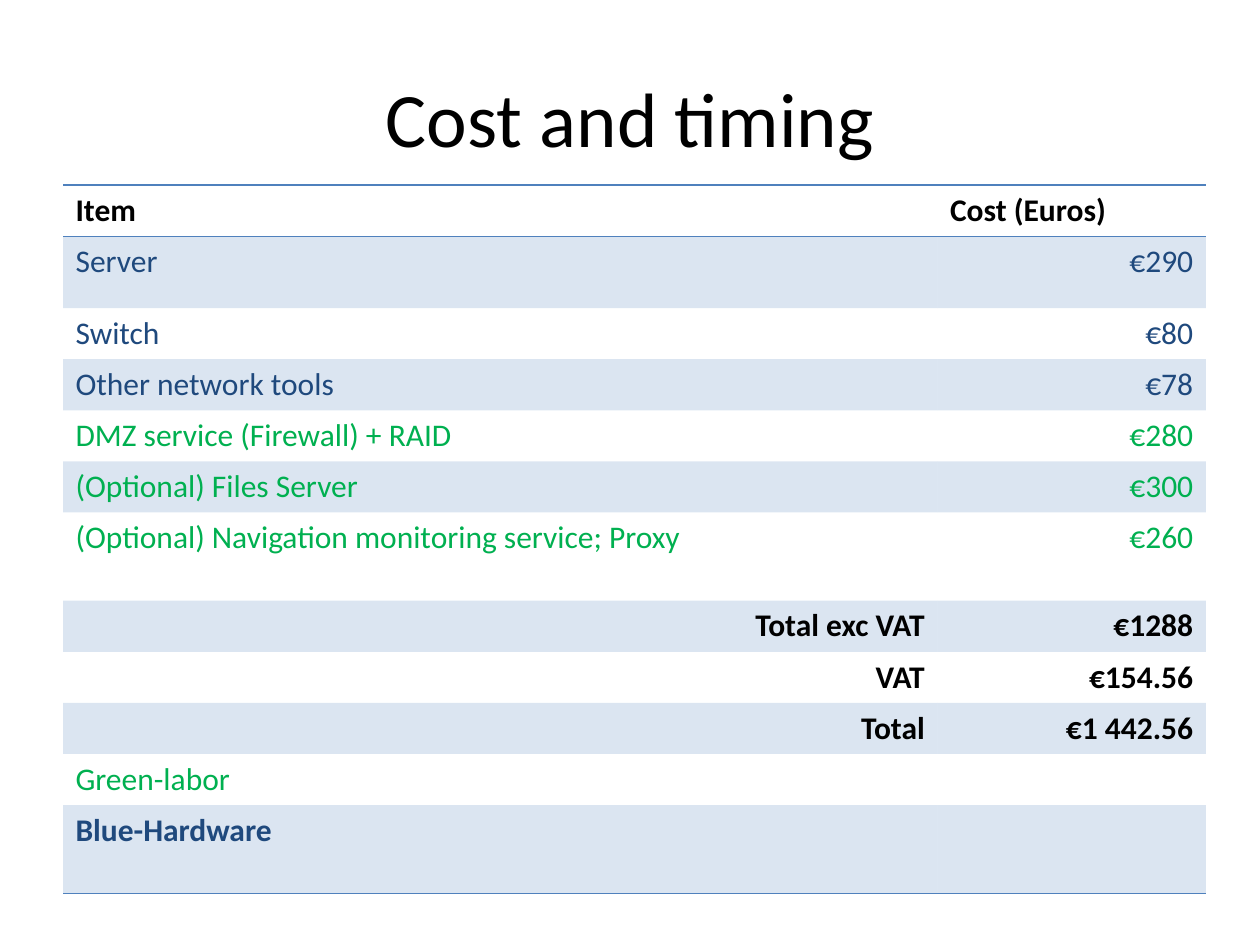
from lxml import etree
from pptx import Presentation
from pptx.dml.color import RGBColor
from pptx.enum.text import MSO_ANCHOR, PP_ALIGN
from pptx.oxml import parse_xml
from pptx.oxml.ns import nsdecls, qn
from pptx.util import Inches, Pt

LEFT, RIGHT, CENTER = PP_ALIGN.LEFT, PP_ALIGN.RIGHT, PP_ALIGN.CENTER
MIDDLE = MSO_ANCHOR.MIDDLE
BLACK = RGBColor(0x00, 0x00, 0x00)
NAVY = RGBColor(0x1F, 0x49, 0x7D)
GREEN = RGBColor(0x00, 0xB0, 0x50)
BLUE = RGBColor(0x4F, 0x81, 0xBD)
PLAIN_STYLE = "{2D5ABB26-0587-4C30-8999-92F81FD0307C}"

# Item, cost, colour, bold, item alignment, row height
ROWS = [
    ("Item", "Cost (Euros)", BLACK, True, LEFT, 0.4),
    ("Server", "€290", NAVY, False, LEFT, 0.57),
    ("Switch", "€80", NAVY, False, LEFT, 0.4),
    ("Other network tools", "€78", NAVY, False, LEFT, 0.4),
    ("DMZ service (Firewall) + RAID", "€280", GREEN, False, LEFT, 0.4),
    ("(Optional) Files Server", "€300", GREEN, False, LEFT, 0.4),
    ("(Optional) Navigation monitoring service; Proxy", "€260",
     GREEN, False, LEFT, 0.7),
    ("Total exc VAT", "€1288", BLACK, True, RIGHT, 0.4),
    ("VAT", "€154.56", BLACK, True, RIGHT, 0.4),
    ("Total", "€1 442.56", BLACK, True, RIGHT, 0.4),
    ("Green-labor", "", GREEN, False, LEFT, 0.4),
    ("Blue-Hardware", "", NAVY, True, LEFT, 0.7),
]


def set_font(para, size, color, bold):
    para.font.name = "Calibri"
    para.font.size = Pt(size)
    para.font.bold = bold
    para.font.color.rgb = color


def add_border(cell, side):
    line = parse_xml(
        f'<a:ln{side} {nsdecls("a")} w="{Pt(1)}"><a:solidFill>'
        f'<a:srgbClr val="{BLUE}"/></a:solidFill></a:ln{side}>')
    cell._tc.get_or_add_tcPr().insert(0, line)


deck = Presentation()
deck.slide_width, deck.slide_height = Inches(10), Inches(7.5)
slide = deck.slides.add_slide(deck.slide_layouts[5])

# Title
title = slide.shapes.title
title.left, title.top = Inches(0.5), Inches(0.3)
title.width, title.height = Inches(9), Inches(1.25)
title.text_frame.text = "Cost and timing"
title.text_frame.vertical_anchor = MIDDLE
head = title.text_frame.paragraphs[0]
head.alignment = CENTER
set_font(head, 44, BLACK, False)

# Cost table without a built-in style
frame = slide.shapes.add_table(
    len(ROWS), 2, Inches(0.5), Inches(1.47), Inches(9.07), Inches(5.6))
table = frame.table
table.first_row = table.horz_banding = False
table._tbl.tblPr.find(qn("a:tableStyleId")).text = PLAIN_STYLE
table.columns[0].width = Inches(6.94)
table.columns[1].width = Inches(2.13)

for i, (item, cost, color, bold, align, height) in enumerate(ROWS):
    table.rows[i].height = Inches(height)
    cost_align = RIGHT if i else LEFT
    for j, (text, side) in enumerate([(item, align), (cost, cost_align)]):
        cell = table.cell(i, j)
        cell.text = text
        para = cell.text_frame.paragraphs[0]
        para.alignment = side
        set_font(para, 18, color, bold)

        # Every second row has a pale band
        if i % 2:
            cell.fill.solid()
            cell.fill.fore_color.rgb = BLUE
            tint = cell._tc.tcPr.find(".//" + qn("a:srgbClr"))
            etree.SubElement(tint, qn("a:alpha"), val="20000")
        else:
            cell.fill.background()

        # Rules around the header and under the last row
        if i in (0, len(ROWS) - 1):
            add_border(cell, "B")
        if i == 0:
            add_border(cell, "T")

deck.save("out.pptx")
